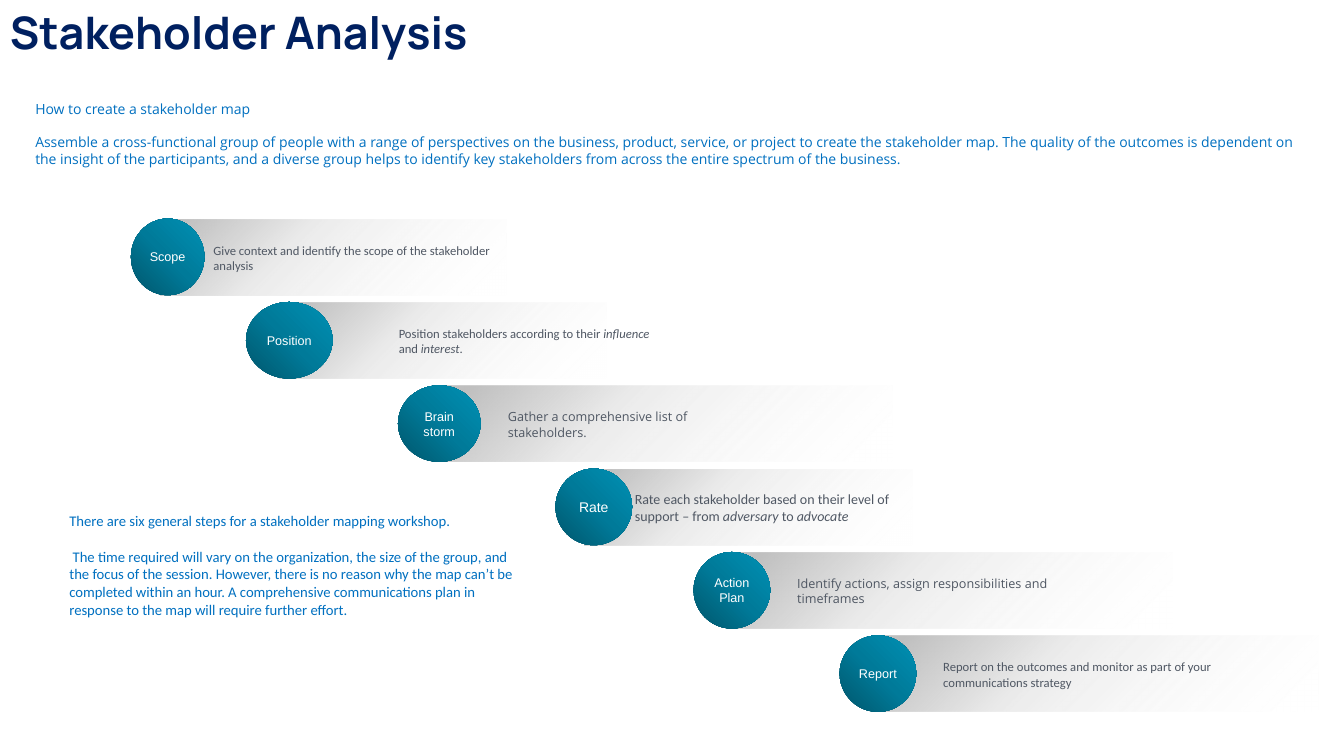
from lxml import etree
from pptx import Presentation
from pptx.dml.color import RGBColor
from pptx.enum.shapes import MSO_SHAPE as Shape
from pptx.enum.text import MSO_ANCHOR as Anchor, PP_ALIGN as Align
from pptx.oxml.ns import qn
from pptx.util import Cm, Pt

NAVY, BLUE, SLATE, WHITE = "002060", "0070C0", "4F5763", "FFFFFF"
# Gradient stops: position %, colour, opacity %
BAR_STOPS = [(5, "BFBFBF", 100), (37, "BFBFBF", 31), (100, "FFFFFF", 0)]
CIRCLE_STOPS = [(0, "00566B", 100), (50, "007A99", 100), (100, "0091B5", 100)]

STEP_TOP, STEP_PITCH, STEP_HEIGHT = 5.51, 2.1, 1.93
# Label, description, its font and size, label size,
# then left and width in cm of circle, bar and description
STEPS = [
    ("Scope", "Give context and identify the scope of the stakeholder analysis",
     "Calibri", 9, 9, (3.3, 1.85), (4.06, 8.71), (5.13, 7.72)),
    ("Position", "Position stakeholders according to their *influence* and *interest*.",
     "Calibri", 9, 9, (6.2, 2.18), (7.06, 8.23), (9.8, 7.32)),
    ("Brain\nstorm", "Gather a comprehensive list of stakeholders.",
     "Open Sans", 9, 9, (10.03, 2.08), (11.15, 11.35), (12.55, 6.27)),
    ("Rate", "Rate each stakeholder based on their level of support – from *adversary* to *advocate*",
     "Calibri", 10, 10, (14, 1.93), (14.73, 8.28), (15.75, 7.34)),
    ("Action Plan", "Identify actions, assign responsibilities and timeframes",
     "Open Sans", 9, 9, (17.48, 1.93), (18.47, 11.07), (19.84, 7.62)),
    ("Report", "Report on the outcomes and monitor as part of your communications strategy",
     "Calibri", 9, 9, (21.16, 1.93), (22.15, 11.07), (23.52, 8.05)),
]


def color(hex_string):
    return RGBColor.from_string(hex_string)


def write(shape, text, *, font, size, fill, bold=False, align=Align.LEFT,
          anchor=Anchor.TOP, gap=0, side_inset=0.25):
    """Fill a shape with one paragraph per line; *stars* mark italics."""
    frame = shape.text_frame
    frame.word_wrap = True
    frame.vertical_anchor = anchor
    frame.margin_left = frame.margin_right = Cm(side_inset)
    for index, line in enumerate(text.split("\n")):
        paragraph = frame.paragraphs[0] if index == 0 else frame.add_paragraph()
        paragraph.alignment = align
        if index and gap:
            paragraph.space_before = Pt(gap)
        for part, words in enumerate(line.split("*")):
            if not words:
                continue
            run = paragraph.add_run()
            run.text = words
            run.font.name, run.font.size = font, Pt(size)
            run.font.bold, run.font.italic = bold, part % 2 == 1
            run.font.color.rgb = color(fill)


def add_text(shapes, box, text, **format):
    write(shapes.add_textbox(*map(Cm, box)), text, **format)


def add_gradient_shape(shapes, kind, box, stops, angle):
    """Add a borderless shape; the angle runs clockwise in degrees."""
    shape = shapes.add_shape(kind, *map(Cm, box))
    shape.shadow.inherit = False
    shape.line.fill.background()
    shape.fill.gradient()
    gradient = shape._element.spPr.find(qn("a:gradFill"))
    for child in list(gradient):
        gradient.remove(child)
    stop_list = etree.SubElement(gradient, qn("a:gsLst"))
    for position, hex_string, opacity in stops:
        stop = etree.SubElement(stop_list, qn("a:gs"), pos=str(position * 1000))
        tint = etree.SubElement(stop, qn("a:srgbClr"), val=hex_string)
        if opacity < 100:
            etree.SubElement(tint, qn("a:alpha"), val=str(opacity * 1000))
    etree.SubElement(gradient, qn("a:lin"), ang=str(angle * 60000), scaled="0")
    return shape


def add_step(slide, top, step):
    label, description, font, size, label_size, circle_x, bar_x, text_x = step
    shapes = slide.shapes.add_group_shape().shapes
    add_gradient_shape(shapes, Shape.RECTANGLE,
                       (bar_x[0], top + 0.02, bar_x[1], STEP_HEIGHT - 0.02), BAR_STOPS, 45)
    add_text(shapes, (text_x[0], top + 0.48, text_x[1], STEP_HEIGHT - 0.92), description,
             font=font, size=size, fill=SLATE, anchor=Anchor.MIDDLE)
    circle = add_gradient_shape(shapes, Shape.OVAL,
                                (circle_x[0], top, circle_x[1], STEP_HEIGHT), CIRCLE_STOPS, 315)
    write(circle, label, font="Arial", size=label_size, fill=WHITE,
          align=Align.CENTER, anchor=Anchor.MIDDLE, side_inset=0.1)


def add_steps(slide):
    for index, step in enumerate(STEPS):
        add_step(slide, STEP_TOP + index * STEP_PITCH, step)


def add_texts(slide):
    """Add the title, the introduction and the note beside the steps."""
    add_text(slide.shapes, (0, 0, 21.87, 1.63), "Stakeholder Analysis",
             font="Manrope", size=32, fill=NAVY, bold=True)
    add_text(slide.shapes, (0.64, 2.41, 32.59, 2.39),
             "How to create a stakeholder map\n"
             "Assemble a cross-functional group of people with a range of perspectives on the "
             "business, product, service, or project to create the stakeholder map. The quality "
             "of the outcomes is dependent on the insight of the participants, and a diverse "
             "group helps to identify key stakeholders from across the entire spectrum of the "
             "business.",
             font="Open Sans", size=10, fill=BLUE, gap=11.4)
    add_text(slide.shapes, (1.5, 12.78, 11.71, 2.95),
             "There are six general steps for a stakeholder mapping workshop.\n"
             " The time required will vary on the organization, the size of the group, and the "
             "focus of the session. However, there is no reason why the map can’t be completed "
             "within an hour. A comprehensive communications plan in response to the map will "
             "require further effort.",
             font="Calibri", size=10.5, fill=BLUE, gap=12.8)


def main():
    presentation = Presentation()
    presentation.slide_width, presentation.slide_height = Cm(33.87), Cm(19.05)
    slide = presentation.slides.add_slide(presentation.slide_layouts[6])
    add_steps(slide)
    add_texts(slide)
    presentation.save("out.pptx")


if __name__ == "__main__":
    main()
